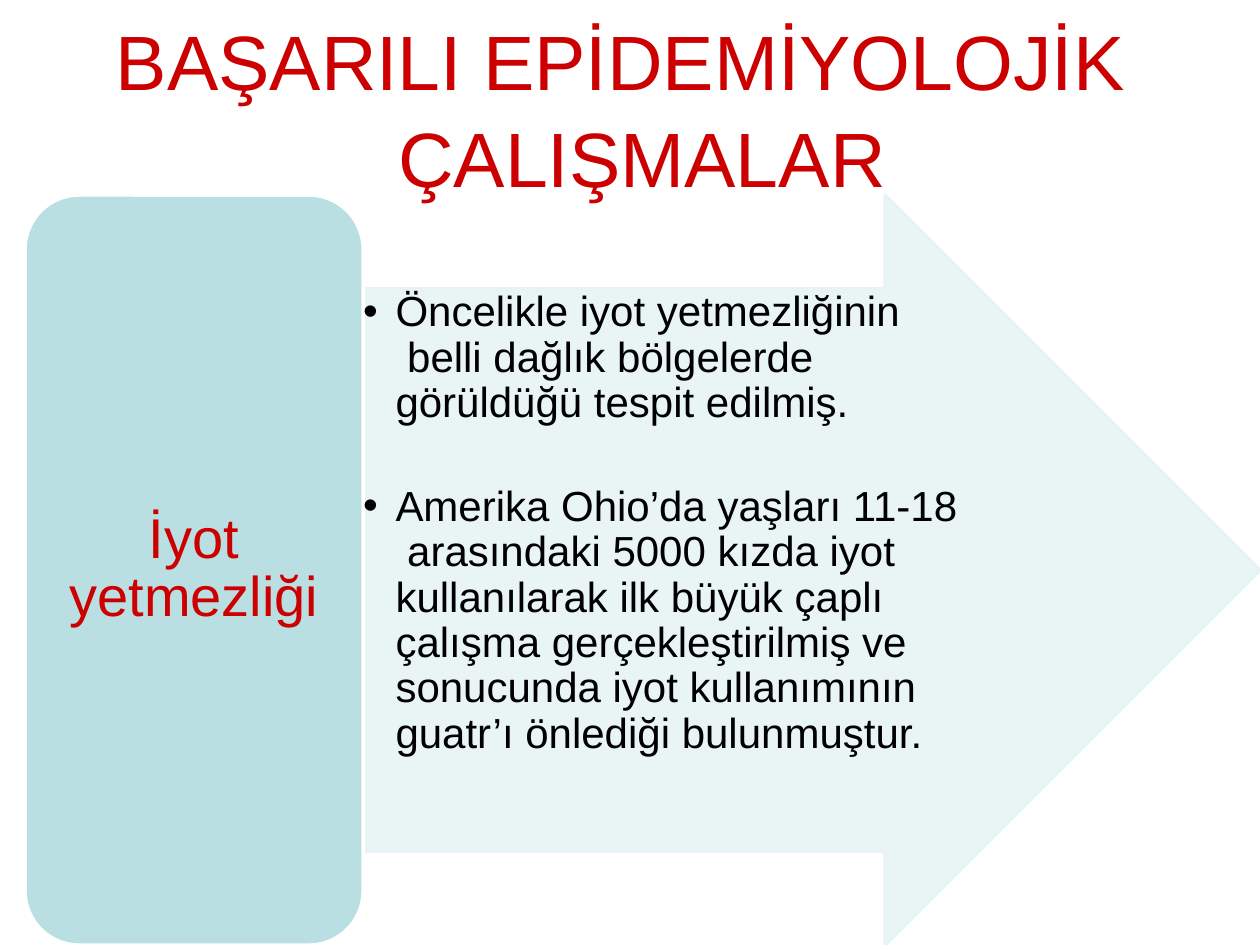
from lxml.etree import SubElement
from pptx import Presentation
from pptx.dml.color import RGBColor
from pptx.enum.shapes import MSO_SHAPE as Kind
from pptx.enum.text import MSO_ANCHOR as Anchor, MSO_AUTO_SIZE as Fit, PP_ALIGN as Align
from pptx.oxml.ns import qn
from pptx.util import Pt

TITLE = "BAŞARILI EPİDEMİYOLOJİK\vÇALIŞMALAR"
LABEL = "İyot\vyetmezliği"
POINTS = [
    "Öncelikle iyot yetmezliğinin\v belli dağlık bölgelerde\vgörüldüğü tespit edilmiş.",
    "Amerika Ohio’da yaşları 11-18\v arasındaki 5000 kızda iyot\vkullanılarak ilk büyük çaplı\v"
    "çalışma gerçekleştirilmiş ve\vsonucunda iyot kullanımının\vguatr’ı önlediği bulunmuştur.",
]
RED, BLACK, WHITE, TEAL, PALE = "CC0000", "000000", "FFFFFF", "BADFE2", "E7F3F4"
WIDE, HIGH = 720, 540
TOP, LEFT, SPLIT = 111.5, 14.4, 207.5
TALL = HIGH - TOP


def paint(target, color):
    target.solid()
    target.fore_color.rgb = RGBColor.from_string(color)


def place(shape, x, y, w, h):
    shape.left, shape.top, shape.width, shape.height = Pt(x), Pt(y), Pt(w), Pt(h)


def write(shape, text, size, color, anchor, align, inset=0):
    frame = shape.text_frame
    frame.text = text
    frame.word_wrap, frame.auto_size = True, Fit.NONE
    frame.vertical_anchor = anchor
    frame.margin_left = frame.margin_right = frame.margin_bottom = 0
    frame.margin_top = Pt(inset)
    for para in frame.paragraphs:
        para.alignment = align
        para.space_before = Pt(0)
        for run in para.runs:
            run.font.name, run.font.size = "Arial", Pt(size)
            run.font.color.rgb = RGBColor.from_string(color)
    return frame.paragraphs


def hang(para, size):
    props = para._p.get_or_add_pPr()
    props.set("marL", str(Pt(size)))
    props.set("indent", str(-Pt(size)))


def block(slide, kind, x, w, fill, edge):
    shape = slide.shapes.add_shape(kind, Pt(x), Pt(TOP), Pt(w), Pt(TALL))
    shape.shadow.inherit = False
    paint(shape.fill, fill)
    paint(shape.line.fill, edge)
    shape.line.width = Pt(1.92)
    return shape


def main():
    """Build the slide: a title, a label panel and an arrow behind two points."""
    deck = Presentation()
    deck.slide_width, deck.slide_height = Pt(WIDE), Pt(HIGH)
    slide = deck.slides.add_slide(deck.slide_layouts[1])
    title, body = slide.placeholders

    place(title, 66, 5, 578, 107)
    head = write(title, TITLE, 44, RED, Anchor.TOP, Align.CENTER)[0]
    head.line_spacing = 1.05
    hang(head, 24)

    arrow = block(slide, Kind.RIGHT_ARROW, SPLIT, WIDE - SPLIT, PALE, PALE)
    arrow.adjustments[0], arrow.adjustments[1] = 0.75, 0.5
    tint = arrow.fill._xPr.find(qn("a:solidFill"))[0]
    SubElement(tint, qn("a:alpha")).set("val", "90000")

    panel = block(slide, Kind.ROUNDED_RECTANGLE, LEFT, SPLIT - LEFT, TEAL, WHITE)
    panel.adjustments[0] = 0.16
    label = write(panel, LABEL, 32, RED, Anchor.MIDDLE, Align.CENTER)[0]
    label.line_spacing = Pt(33.1)

    place(body, SPLIT, 160, 350, 266)
    paras = write(body, "\n".join(POINTS), 24, BLACK, Anchor.TOP, Align.LEFT, 6)
    for para in paras:
        para.line_spacing = 0.9
        hang(para, 18.5)
    paras[1].space_before = Pt(33.5)
    tree = slide.shapes._spTree
    tree.remove(body._element)
    tree.append(body._element)

    deck.save("out.pptx")


if __name__ == "__main__":
    main()
